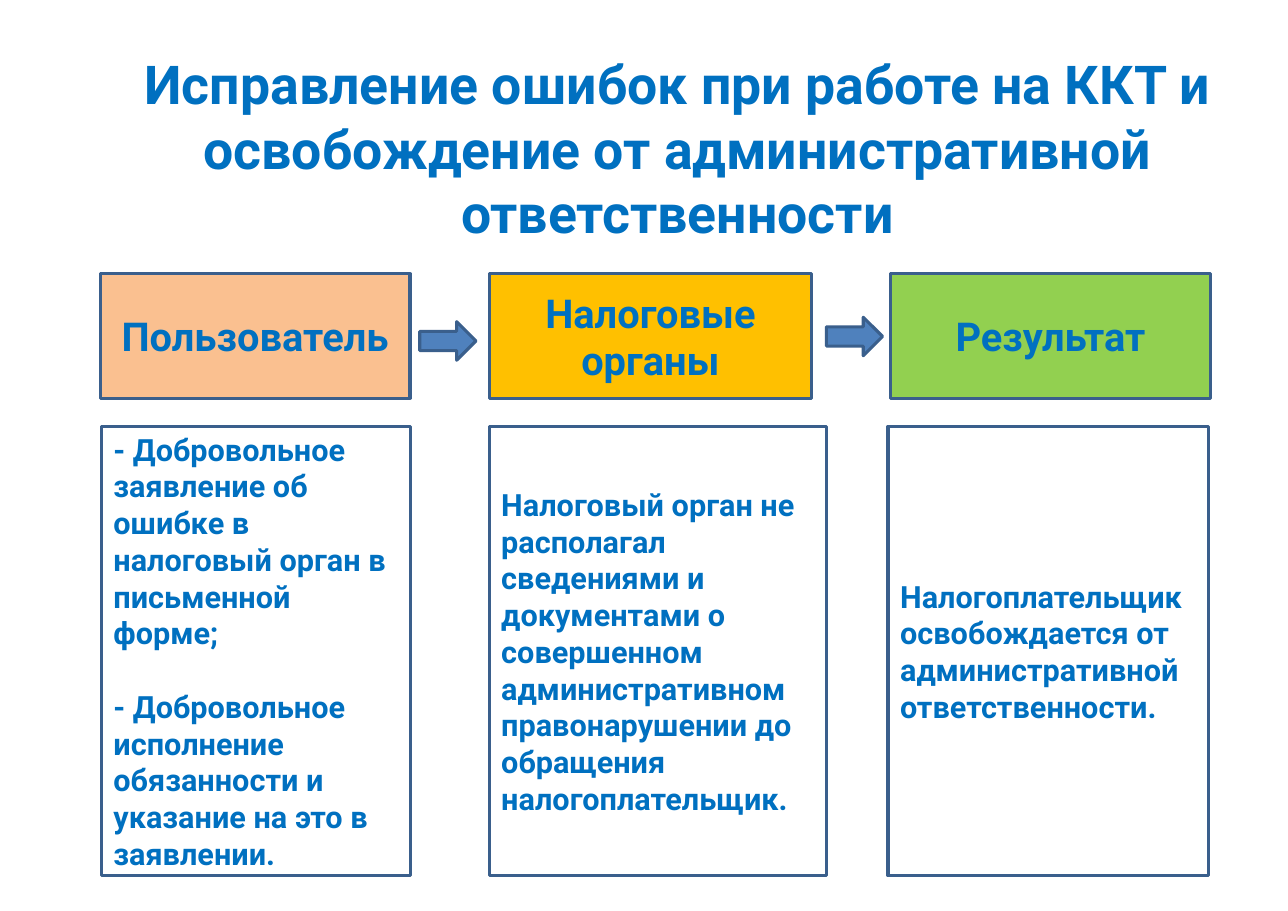
from dataclasses import dataclass

from pptx import Presentation
from pptx.dml.color import RGBColor
from pptx.enum.shapes import MSO_SHAPE
from pptx.enum.text import MSO_ANCHOR, PP_ALIGN
from pptx.util import Inches, Pt

SLIDE_W, SLIDE_H = Inches(11.69), Inches(8.27)


@dataclass(frozen=True)
class Theme:
    font: str = "Roboto"
    text: str = "0070C0"
    line: str = "3A5F8C"
    arrow: str = "4F81BD"
    user: str = "FAC090"
    authority: str = "FFC000"
    result: str = "92D050"
    paper: str = "FFFFFF"
    title_pt: int = 35
    header_pt: int = 26
    body_pt: int = 20
    body_gap_pt: int = 24
    line_pt: int = 2


@dataclass(frozen=True)
class Box:
    """Lengths in percent of the slide's width and height."""
    x: float
    y: float
    w: float
    h: float

    def emu(self) -> tuple[int, int, int, int]:
        return (round(SLIDE_W * self.x / 100), round(SLIDE_H * self.y / 100),
                round(SLIDE_W * self.w / 100), round(SLIDE_H * self.h / 100))


@dataclass(frozen=True)
class Stage:
    header: str
    fill: str
    header_x: float
    header_w: float
    body: str
    body_x: float
    body_w: float


THEME = Theme()
TITLE_BOX = Box(9.32, 7.98, 86.57, 16.44)
HEADER_Y, HEADER_H = 30.05, 13.66
BODY_Y, BODY_H = 46.8, 49.33
ARROWS = [Box(32.59, 35.31, 4.36, 4.23), Box(64.16, 34.82, 4.36, 4.23)]

TITLE = ("Исправление ошибок при работе на ККТ и освобождение "
         "от административной ответственности")
STAGES = [
    Stage("Пользователь", THEME.user, 7.8, 24.04,
          "- Добровольное заявление об ошибке в налоговый орган в письменной форме;\n"
          "- Добровольное исполнение обязанности и указание на это в заявлении.",
          7.87, 24.04),
    Stage("Налоговые органы", THEME.authority, 37.98, 25.06,
          "Налоговый орган не располагал сведениями и документами о совершенном "
          "административном правонарушении до обращения налогоплательщик.",
          37.98, 26.18),
    Stage("Результат", THEME.result, 69.12, 24.89,
          "Налогоплательщик освобождается от административной ответственности.",
          68.95, 24.89),
]


def write_text(s, text: str, size: int, align: PP_ALIGN) -> None:
    tf = s.text_frame
    tf.word_wrap = True
    tf.vertical_anchor = MSO_ANCHOR.MIDDLE
    tf.margin_left = tf.margin_right = Inches(0.11)
    tf.margin_top = tf.margin_bottom = Inches(0.05)
    tf.text = text
    for i, p in enumerate(tf.paragraphs):
        p.alignment = align
        if i:
            p.space_before = Pt(THEME.body_gap_pt)
        for r in p.runs:
            r.font.name = THEME.font
            r.font.size = Pt(size)
            r.font.bold = True
            r.font.color.rgb = RGBColor.from_string(THEME.text)


def add_block(slide, kind: MSO_SHAPE, box: Box, fill: str):
    s = slide.shapes.add_shape(kind, *box.emu())
    s.shadow.inherit = False
    s.fill.solid()
    s.fill.fore_color.rgb = RGBColor.from_string(fill)
    s.line.color.rgb = RGBColor.from_string(THEME.line)
    s.line.width = Pt(THEME.line_pt)
    return s


def add_stage(slide, stage: Stage) -> None:
    header = add_block(slide, MSO_SHAPE.RECTANGLE,
                       Box(stage.header_x, HEADER_Y, stage.header_w, HEADER_H), stage.fill)
    write_text(header, stage.header, THEME.header_pt, PP_ALIGN.CENTER)
    body = add_block(slide, MSO_SHAPE.RECTANGLE,
                     Box(stage.body_x, BODY_Y, stage.body_w, BODY_H), THEME.paper)
    write_text(body, stage.body, THEME.body_pt, PP_ALIGN.LEFT)


def main() -> None:
    prs = Presentation()
    prs.slide_width, prs.slide_height = SLIDE_W, SLIDE_H
    slide = prs.slides.add_slide(prs.slide_layouts[6])

    # Title
    title = slide.shapes.add_textbox(*TITLE_BOX.emu())
    write_text(title, TITLE, THEME.title_pt, PP_ALIGN.CENTER)

    # Stages: header above its explanation
    for stage in STAGES:
        add_stage(slide, stage)

    # Arrows between the headers
    for box in ARROWS:
        add_block(slide, MSO_SHAPE.RIGHT_ARROW, box, THEME.arrow)

    prs.save("out.pptx")


if __name__ == "__main__":
    main()
